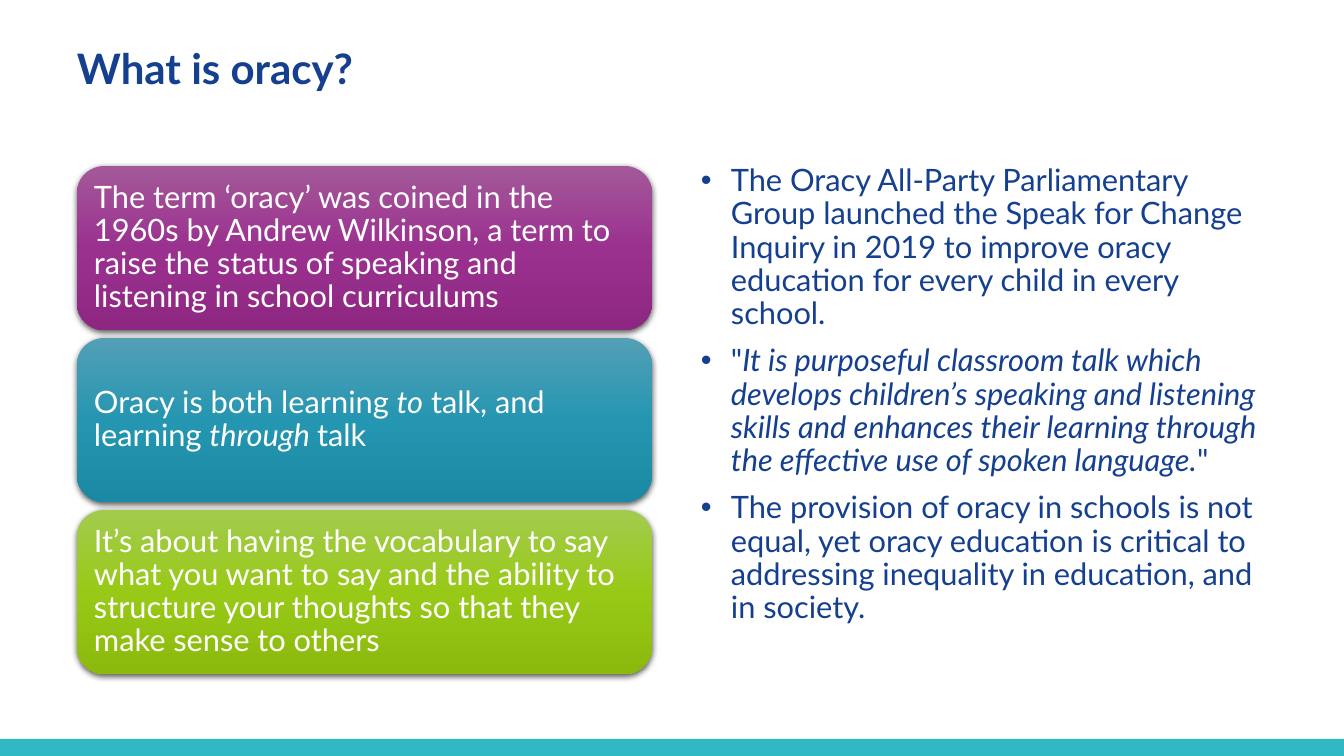
from copy import deepcopy
from typing import NamedTuple

from lxml import etree
from pptx import Presentation
from pptx import util as u
from pptx.dml.color import RGBColor
from pptx.enum import shapes, text
from pptx.oxml.ns import qn

EMU_PER_PX = 12192000 / 1344

NAVY = RGBColor(0x15, 0x3F, 0x8F)
TEAL = RGBColor(0x30, 0xB8, 0xC5)
WHITE = RGBColor(0xFF, 0xFF, 0xFF)
PURPLES = [RGBColor(0xA3, 0x58, 0x99), RGBColor(0x9B, 0x31, 0x8F), RGBColor(0x8E, 0x27, 0x82)]
BLUES = [RGBColor(0x53, 0x9F, 0xB6), RGBColor(0x25, 0x96, 0xB1), RGBColor(0x1B, 0x89, 0xA3)]
GREENS = [RGBColor(0xA2, 0xCB, 0x4E), RGBColor(0x99, 0xC9, 0x17), RGBColor(0x8B, 0xBA, 0x0D)]


class Run(NamedTuple):
    words: str
    italic: bool = False


class Card(NamedTuple):
    shades: list[RGBColor]
    runs: list[Run]


CARD_LEFT, CARD_TOP, CARD_WIDTH, CARD_HEIGHT, CARD_PITCH = 77, 166, 575, 164, 172
BULLET_INDENT = 30

CARDS = [
    Card(PURPLES, [Run("The term ‘oracy’ was coined in the 1960s by Andrew Wilkinson, a term to "
                       "raise the status of speaking and listening in school curriculums")]),
    Card(BLUES, [Run("Oracy is both learning "), Run("to", True), Run(" talk, and learning "),
                 Run("through ", True), Run("talk")]),
    Card(GREENS, [Run("It’s about having the vocabulary to say what you want to say and "
                      "the ability to structure your thoughts so that they make sense to others")]),
]

BULLETS = [
    [Run("The Oracy All-Party Parliamentary Group launched the Speak for Change Inquiry in 2019 "
         "to improve oracy education for every child in every school.")],
    [Run('"'),
     Run("It is purposeful classroom talk which develops children’s speaking and listening skills "
         "and enhances their learning through the effective use of spoken language.", True),
     Run('"')],
    [Run("The provision of oracy in schools is not equal, yet oracy education is critical "
         "to addressing inequality in education, and in society.")],
]

TITLE_FONT = {"name": "Lato", "size": u.Pt(30), "bold": True}
BODY_FONT = {"name": "Lato", "size": u.Pt(22)}


def px(length: int) -> u.Emu:
    return u.Emu(round(length * EMU_PER_PX))


def set_attributes(target, values: dict) -> None:
    for name, value in values.items():
        setattr(target, name, value)


def set_frame(frame, margins: tuple[int, int, int, int], anchor) -> None:
    """Set wrapping, anchor and the left, top, right and bottom margins."""
    left, top, right, bottom = map(px, margins)
    set_attributes(frame, {"word_wrap": True, "vertical_anchor": anchor,
                           "margin_left": left, "margin_top": top,
                           "margin_right": right, "margin_bottom": bottom})


def write_runs(paragraph, runs: list[Run], font: dict, color: RGBColor) -> None:
    set_attributes(paragraph, {"line_spacing": 0.9, "alignment": text.PP_ALIGN.LEFT})
    for words, italic in runs:
        run = paragraph.add_run()
        run.text = words
        set_attributes(run.font, {**font, "italic": italic})
        run.font.color.rgb = color


def add_bullet(paragraph) -> None:
    properties = paragraph._p.get_or_add_pPr()
    properties.set("marL", str(px(BULLET_INDENT)))
    properties.set("indent", str(-px(BULLET_INDENT)))
    etree.SubElement(properties, qn("a:buFont"), typeface="Arial")
    etree.SubElement(properties, qn("a:buChar"), char="•")


def fill_downwards(shape, shades: list[RGBColor]) -> None:
    """Fill with evenly spaced shades from top to bottom."""
    shape.fill.gradient()
    shape.fill.gradient_angle = 270
    stop_list = shape._element.spPr.find(".//" + qn("a:gsLst"))
    stop_list.append(deepcopy(stop_list[-1]))
    for index, (stop, shade) in enumerate(zip(shape.fill.gradient_stops, shades)):
        stop.position = index / (len(shades) - 1)
        stop.color.rgb = shade


def add_soft_shadow(shape) -> None:
    shape.shadow.inherit = False
    effects = shape._element.spPr.find(qn("a:effectLst"))
    shadow = etree.SubElement(effects, qn("a:outerShdw"), blurRad=str(u.Pt(4.5)),
                              dist=str(u.Pt(1.5)), dir="5400000", algn="ctr", rotWithShape="0")
    black = etree.SubElement(shadow, qn("a:srgbClr"), val="000000")
    etree.SubElement(black, qn("a:alpha"), val="63000")


def add_card(slide, card: Card, top: int) -> None:
    panel = slide.shapes.add_shape(shapes.MSO_SHAPE.ROUNDED_RECTANGLE, px(CARD_LEFT), px(top),
                                   px(CARD_WIDTH), px(CARD_HEIGHT))
    panel.line.fill.background()
    fill_downwards(panel, card.shades)
    add_soft_shadow(panel)
    set_frame(panel.text_frame, (9, 9, 9, 9), text.MSO_ANCHOR.MIDDLE)
    write_runs(panel.text_frame.paragraphs[0], card.runs, BODY_FONT, WHITE)


def add_footer_band(slide) -> None:
    band = slide.shapes.add_shape(shapes.MSO_SHAPE.RECTANGLE, 0, px(739), px(1344), px(17))
    band.fill.solid()
    band.fill.fore_color.rgb = TEAL
    band.line.fill.background()
    band.shadow.inherit = False


def add_title(slide) -> None:
    frame = slide.shapes.add_textbox(px(77), px(40), px(987), px(103)).text_frame
    set_frame(frame, (0, 8, 0, 0), text.MSO_ANCHOR.TOP)
    write_runs(frame.paragraphs[0], [Run("What is oracy?")], TITLE_FONT, NAVY)


def add_bullets(slide) -> None:
    frame = slide.shapes.add_textbox(px(691), px(160), px(576), px(521)).text_frame
    set_frame(frame, (10, 5, 10, 5), text.MSO_ANCHOR.TOP)
    for index, runs in enumerate(BULLETS):
        paragraph = frame.add_paragraph() if index else frame.paragraphs[0]
        add_bullet(paragraph)
        write_runs(paragraph, runs, BODY_FONT, NAVY)
        if index:
            paragraph.space_before = u.Pt(10)


def main() -> None:
    deck = Presentation()
    set_attributes(deck, {"slide_width": px(1344), "slide_height": px(756)})
    slide = deck.slides.add_slide(deck.slide_layouts[6])
    add_footer_band(slide)
    add_title(slide)
    add_bullets(slide)
    for index, card in enumerate(CARDS):
        add_card(slide, card, CARD_TOP + index * CARD_PITCH)
    deck.save("out.pptx")


if __name__ == "__main__":
    main()
